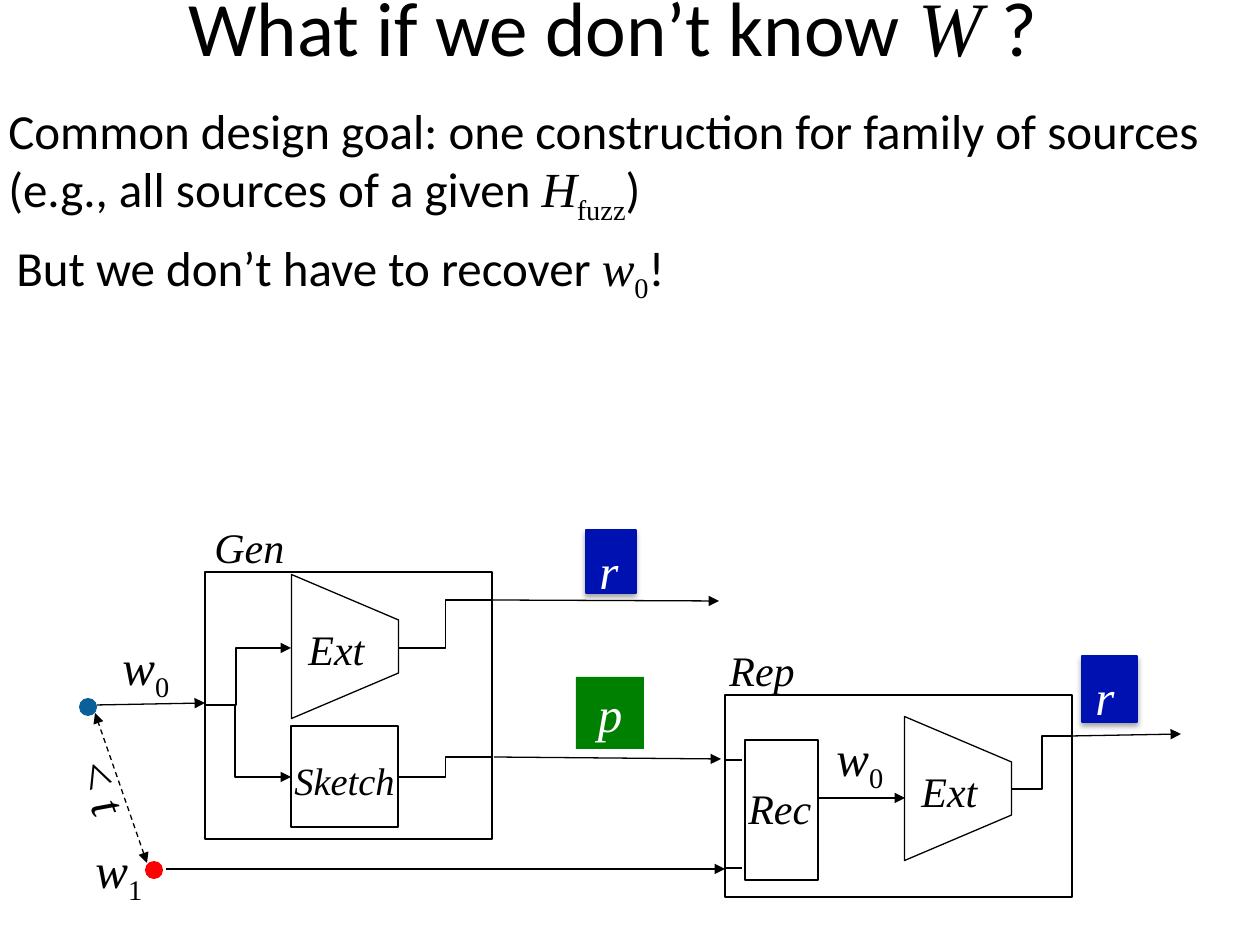
from dataclasses import dataclass

from lxml import etree
from pptx import Presentation
from pptx import util as u
from pptx.dml.color import RGBColor
from pptx.enum import dml, shapes, text
from pptx.oxml import ns

PX = 914400 / 126


@dataclass(frozen=True)
class Theme:
    black: str = "000000"
    white: str = "FFFFFF"
    secret: str = "0011B2"
    public: str = "008000"
    first_reading: str = "0B609A"
    second_reading: str = "FF0000"
    sans: str = "Calibri"
    serif: str = "Times New Roman"
    title: int = 44
    body: int = 28
    label: int = 24
    small_label: int = 22
    line: float = 0.75


def emu(*lengths):
    return [u.Emu(round(length * PX)) for length in lengths]


def add_xml(parent, tag, **attributes):
    return etree.SubElement(parent, ns.qn(tag), attributes)


class Diagram:
    """Draws on one slide; text pieces are (style, words) with styles
    "plain" (sans), "math" (italic serif), "serif" and "sub" (subscript)."""

    def __init__(self, slide, theme):
        self.slide = slide
        self.theme = theme

    def add_pieces(self, frame, pieces, size, color):
        para = frame.paragraphs[0]
        for style, words in pieces:
            if style == "break":
                para.add_line_break()
                continue
            span = para.add_run()
            span.text = words
            span.font.size = u.Pt(size)
            span.font.name = self.theme.sans if style == "plain" else self.theme.serif
            span.font.italic = style == "math"
            span.font.color.rgb = RGBColor.from_string(color)
            if style == "sub":
                span.font._element.set("baseline", "-25000")
        return para

    def text(self, bounds, pieces, size, color=None, wrap=False, centred=False,
             middle=False, angle=0):
        box = self.slide.shapes.add_textbox(*emu(*bounds))
        box.rotation = angle
        frame = box.text_frame
        frame.word_wrap = wrap
        if middle:
            frame.vertical_anchor = text.MSO_ANCHOR.MIDDLE
        para = self.add_pieces(frame, pieces, size, color or self.theme.black)
        para.alignment = text.PP_ALIGN.CENTER if centred else text.PP_ALIGN.LEFT

    def shape(self, kind, bounds, fill=None, outline=None):
        item = self.slide.shapes.add_shape(kind, *emu(*bounds))
        item.shadow.inherit = False
        if fill:
            item.fill.solid()
            item.fill.fore_color.rgb = RGBColor.from_string(fill)
        else:
            item.fill.background()
        if outline:
            item.line.color.rgb = RGBColor.from_string(outline)
            item.line.width = u.Pt(self.theme.line)
        else:
            item.line.fill.background()
        return item

    def frame(self, bounds):
        self.shape(shapes.MSO_SHAPE.RECTANGLE, bounds, outline=self.theme.black)

    def dot(self, left, top, color):
        self.shape(shapes.MSO_SHAPE.OVAL, (left, top, 18, 18), fill=color)

    def extractor(self, left, top):
        """A trapezoid narrowing to the right, with its name."""
        item = self.shape(shapes.MSO_SHAPE.TRAPEZOID, (left, top, 144, 107),
                          outline=self.theme.black)
        item.rotation = 90
        item.adjustments[0] = 0.425
        self.text((left + 23, top + 24, 96, 63), [("math", "Ext")], self.theme.label)

    def secret(self, left, top, width, height):
        """A shadowed square holding the extracted key r."""
        color = self.theme.secret
        item = self.shape(shapes.MSO_SHAPE.RECTANGLE, (left, top, width, height),
                          color, color)
        effects = item._element.spPr.find(ns.qn("a:effectLst"))
        shadow = add_xml(effects, "a:outerShdw", blurRad=str(u.Pt(3.1)),
                         dist=str(u.Pt(1.8)), dir="5400000", rotWithShape="0")
        tint = add_xml(shadow, "a:srgbClr", val=self.theme.black)
        add_xml(tint, "a:alpha", val="35000")
        self.text((left + 1, top + 4, 62, 72), [("math", "r")],
                  self.theme.body, self.theme.white)

    def public(self, bounds):
        item = self.shape(shapes.MSO_SHAPE.RECTANGLE, bounds, self.theme.public)
        item.text_frame.word_wrap = False
        para = self.add_pieces(item.text_frame, [("math", "p")],
                               self.theme.body, self.theme.white)
        para.alignment = text.PP_ALIGN.CENTER

    def reading(self, left, top, index):
        self.text((left, top, 81, 72), [("math", "w"), ("sub", index)], self.theme.body)

    def wire(self, start, end, arrow=True, bend=None, both_ways=False):
        """A straight line, or an elbow turning at the share `bend` of its width."""
        kind = shapes.MSO_CONNECTOR.STRAIGHT if bend is None else shapes.MSO_CONNECTOR.ELBOW
        item = self.slide.shapes.add_connector(kind, *emu(*start, *end))
        item.line.color.rgb = RGBColor.from_string(self.theme.black)
        item.line.width = u.Pt(self.theme.line)
        properties = item._element.spPr
        if bend is not None:
            guides = properties.prstGeom.get_or_add_avLst()
            add_xml(guides, "a:gd", name="adj1", fmla=f"val {round(bend * 100000)}")
        if both_ways:
            item.line.dash_style = dml.MSO_LINE.DASH
            add_xml(item.line._get_or_add_ln(), "a:headEnd", type="triangle")
        if arrow:
            add_xml(item.line._get_or_add_ln(), "a:tailEnd", type="triangle")
        add_xml(properties, "a:effectLst")


def main():
    deck = Presentation()
    deck.slide_width, deck.slide_height = u.Inches(10), u.Inches(7.5)
    theme = Theme()
    page = Diagram(deck.slides.add_slide(deck.slide_layouts[6]), theme)

    page.text((-68, -33, 1362, 118),
              [("plain", "What if we don’t know "), ("math", "W "), ("plain", "?")],
              theme.title, wrap=True, centred=True, middle=True)
    page.text((-4, 94, 1299, 140),
              [("plain", "Common design goal: one construction for family of sources "),
               ("break", ""), ("plain", "(e.g., all sources of a given "),
               ("math", "H"), ("sub", "fuzz"), ("plain", ")")],
              theme.body, wrap=True)
    page.text((-32, 231, 745, 94),
              [("plain", "But we don’t have to recover "),
               ("math", "w"), ("sub", "0"), ("plain", "!")],
              theme.body, wrap=True, centred=True)

    # Gen: extractor and sketch
    page.frame((205, 572, 287, 267))
    page.text((202, 515, 110, 63), [("math", "Gen")], theme.label)
    page.extractor(273, 593)
    page.frame((291, 726, 107, 101))
    page.text((282, 751, 140, 59), [("math", "Sketch")], theme.small_label)
    gen_input = (205, 705)
    page.wire(gen_input, (291, 648), bend=0.36)
    page.wire(gen_input, (291, 777), bend=0.35)
    page.wire((493, 600), (398, 648), arrow=False, bend=0.5)
    page.wire((493, 757), (398, 777), arrow=False, bend=0.5)

    # Rep: recovery and extractor
    page.frame((725, 695, 347, 202))
    page.text((717, 638, 106, 63), [("math", "Rep")], theme.label)
    page.frame((745, 740, 73, 140))
    page.text((736, 776, 103, 82), [("math", "Rec")], theme.label)
    page.extractor(886, 735)
    for port in (760, 868):
        page.wire((725, port), (742, port), arrow=False)
    page.wire((818, 798), (905, 798))
    page.reading(824, 721, "0")
    page.wire((1072, 736), (1012, 789), arrow=False, bend=0.5)

    # Readings and the distance between them
    page.dot(79, 698, theme.first_reading)
    page.reading(110, 630, "0")
    page.dot(145, 861, theme.second_reading)
    page.reading(83, 833, "1")
    page.wire((147, 863), (95, 713), both_ways=True)
    page.text((64, 753, 82, 72), [("serif", "< "), ("math", "t")], theme.body, angle=69.7)

    # Signals between the blocks
    page.wire((97, 705), (205, 703))
    page.wire((493, 600), (719, 601))
    page.wire((494, 757), (721, 759))
    page.wire((166, 869), (725, 869))
    page.wire((1072, 736), (1181, 734))
    page.secret(586, 530, 50, 63)
    page.public((576, 677, 68, 72))
    page.secret(1082, 656, 55, 66)

    deck.save("out.pptx")


if __name__ == "__main__":
    main()
